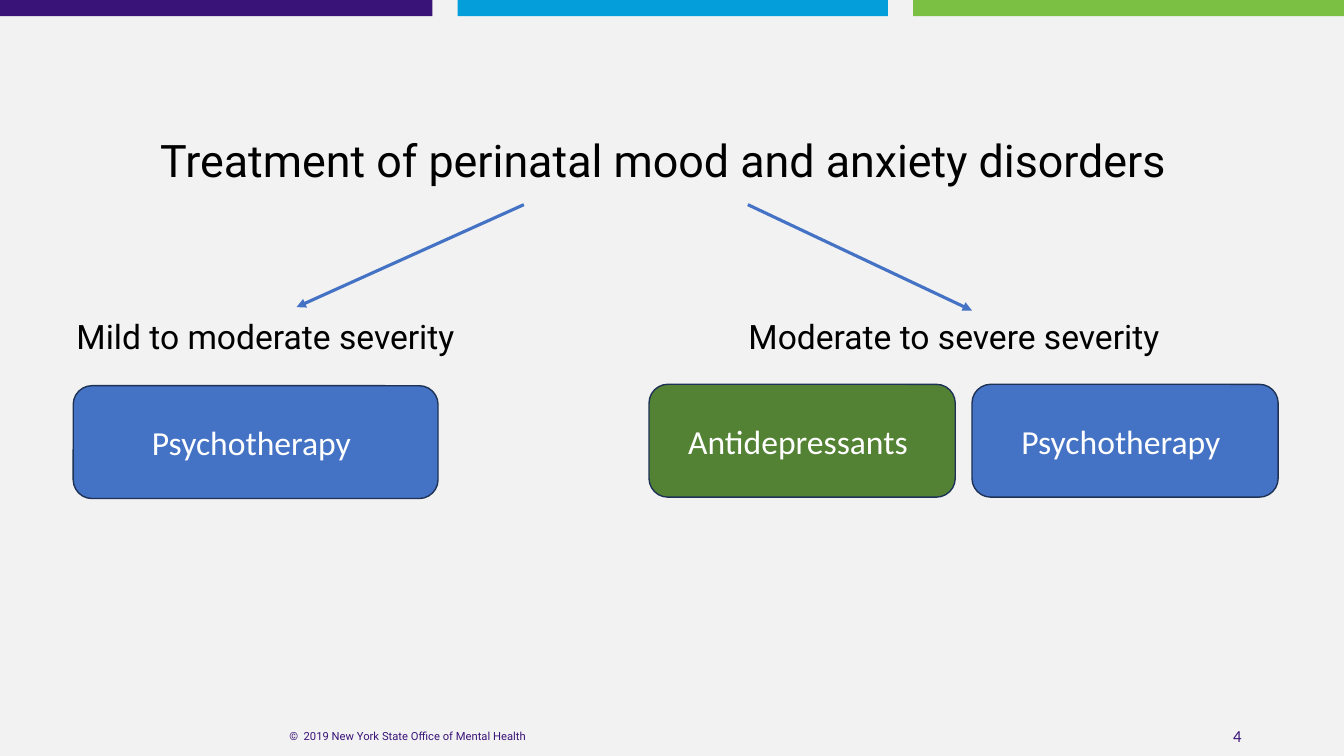
from lxml import etree
from pptx import Presentation
from pptx.dml.color import RGBColor
from pptx.enum.shapes import MSO_CONNECTOR as Connector, MSO_SHAPE as Shape
from pptx.enum.text import MSO_ANCHOR as Anchor, PP_ALIGN as Align
from pptx.oxml.ns import qn
from pptx.util import Pt

BLACK = RGBColor(0x00, 0x00, 0x00)
WHITE = RGBColor(0xFF, 0xFF, 0xFF)
PALE_GREY = RGBColor(0xF2, 0xF2, 0xF2)
PURPLE = RGBColor(0x39, 0x13, 0x78)
SKY = RGBColor(0x04, 0x9F, 0xDA)
LIME = RGBColor(0x7B, 0xBF, 0x43)
BLUE = RGBColor(0x44, 0x72, 0xC4)
GREEN = RGBColor(0x54, 0x82, 0x35)
NAVY = RGBColor(0x1E, 0x32, 0x56)


def write(shape, text, size, font, color, align):
    frame = shape.text_frame
    frame.word_wrap = True
    frame.vertical_anchor = Anchor.MIDDLE
    para = frame.paragraphs[0]
    para.alignment = align
    span = para.add_run()
    span.text = text
    span.font.size = Pt(size)
    span.font.name = font
    span.font.color.rgb = color
    return para


def add_block(page, kind, left, top, width, height, fill):
    block = page.shapes.add_shape(kind, Pt(left), Pt(top), Pt(width), Pt(height))
    block.shadow.inherit = False
    block.fill.solid()
    block.fill.fore_color.rgb = fill
    return block


deck = Presentation()
deck.slide_width, deck.slide_height = Pt(960), Pt(540)
page = deck.slides.add_slide(deck.slide_layouts[5])
page.background.fill.solid()
page.background.fill.fore_color.rgb = PALE_GREY

# Colour bars along the top edge
for left, width, color in [(0, 308.9, PURPLE), (326.9, 307.4, SKY), (652.3, 307.7, LIME)]:
    bar = add_block(page, Shape.RECTANGLE, left, 0, width, 11.5, color)
    bar.line.fill.background()

# Title
title = page.shapes.title
title.left, title.top, title.width, title.height = Pt(60), Pt(88.5), Pt(828), Pt(56)
write(title, "Treatment of perinatal mood and anxiety disorders",
      32, "Roboto", BLACK, Align.CENTER).line_spacing = 0.9

# Severity labels, footer and page number
texts = [
    (47.5, 220, 300, 40, "Mild to moderate severity", 24, "Roboto", BLACK, Align.LEFT),
    (527.5, 220, 320, 40, "Moderate to severe severity", 24, "Roboto", BLACK, Align.LEFT),
    (130.3, 511.2, 322, 28.8, "©  2019 New York State Office of Mental Health",
     8, "Roboto", PURPLE, Align.CENTER),
    (678, 511.2, 216, 28.8, "4", 12, "Calibri", PURPLE, Align.RIGHT),
]
for left, top, width, height, *content in texts:
    box = page.shapes.add_textbox(Pt(left), Pt(top), Pt(width), Pt(height))
    write(box, *content)

# Treatment boxes
treatments = [
    (52.3, 275.5, 260.6, "Psychotherapy", BLUE),
    (694.3, 274.5, 218.7, "Psychotherapy", BLUE),
    (463.6, 274.5, 218.7, "Antidepressants", GREEN),
]
for left, top, width, name, color in treatments:
    box = add_block(page, Shape.ROUNDED_RECTANGLE, left, top, width, 80.6, color)
    box.line.color.rgb = NAVY
    box.line.width = Pt(1)
    box.text_frame.margin_right = Pt(13)
    write(box, name, 24, "Calibri", WHITE, Align.CENTER)

# Arrows from the title to each severity
for start_x, end_x, end_y in [(374.2, 211.8, 219.4), (534.2, 694.3, 221.8)]:
    arrow = page.shapes.add_connector(
        Connector.STRAIGHT, Pt(start_x), Pt(146.2), Pt(end_x), Pt(end_y))
    arrow.line.color.rgb = BLUE
    arrow.line.width = Pt(2.25)
    properties = arrow.line._get_or_add_ln()
    etree.SubElement(properties, qn("a:tailEnd")).set("type", "triangle")
    etree.SubElement(arrow._element.spPr, qn("a:effectLst"))

deck.save("out.pptx")
